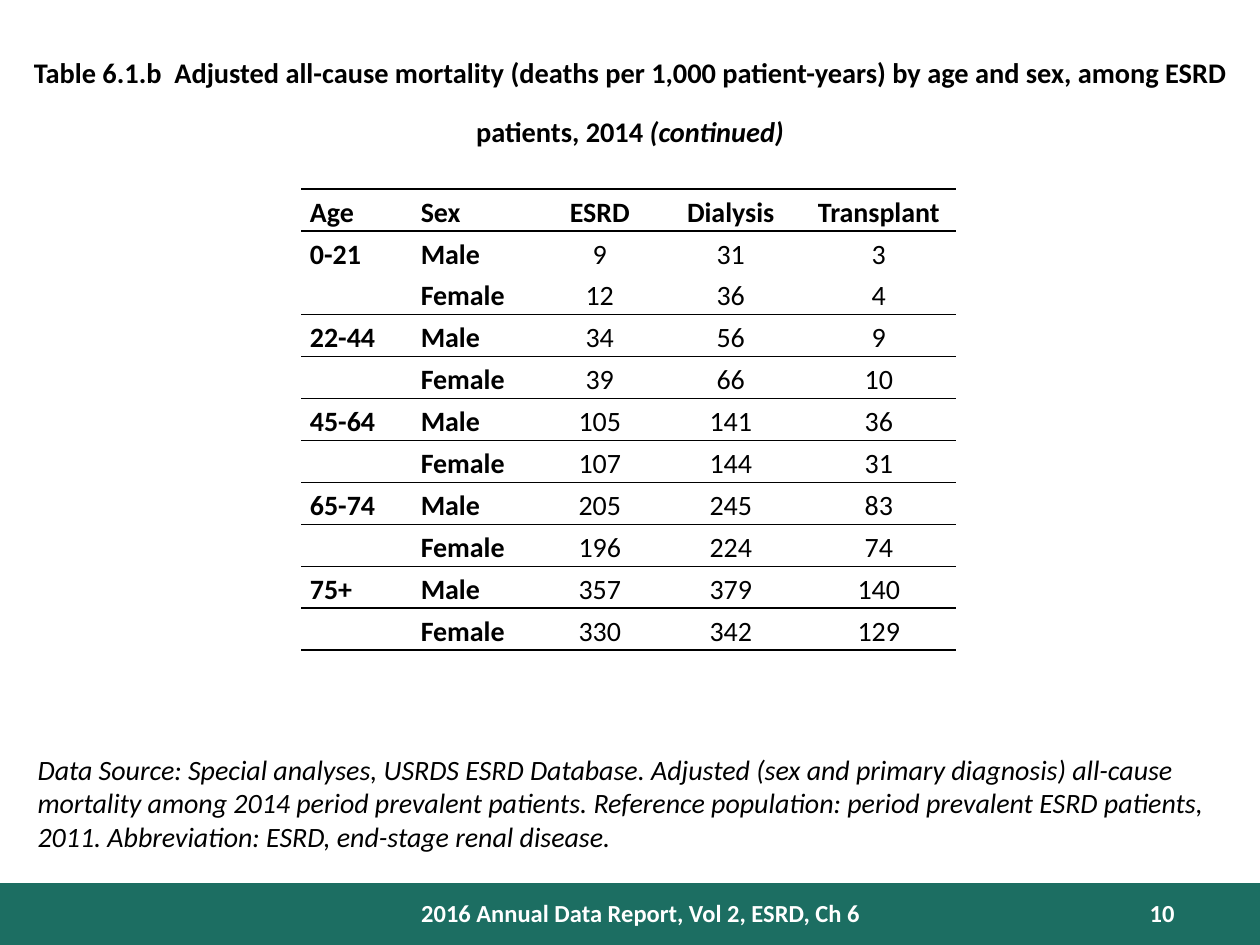
from dataclasses import dataclass
from lxml.etree import SubElement
from pptx import Presentation
from pptx.dml.color import RGBColor
from pptx.enum.shapes import MSO_SHAPE
from pptx.enum.text import MSO_ANCHOR as Anchor, MSO_AUTO_SIZE as AutoSize, PP_ALIGN as Align
from pptx.oxml.ns import qn
from pptx.util import Inches, Pt

# Content
TITLE = [
    ("Table 6.1.b  Adjusted all-cause mortality (deaths per 1,000 patient-years) "
     "by age and sex, among ESRD patients, 2014 ", False),
    ("(continued)", True),
]
HEADER = ("Age", "Sex", "ESRD", "Dialysis", "Transplant")
MORTALITY = {
    "0-21": [("Male", 9, 31, 3), ("Female", 12, 36, 4)],
    "22-44": [("Male", 34, 56, 9), ("Female", 39, 66, 10)],
    "45-64": [("Male", 105, 141, 36), ("Female", 107, 144, 31)],
    "65-74": [("Male", 205, 245, 83), ("Female", 196, 224, 74)],
    "75+": [("Male", 357, 379, 140), ("Female", 330, 342, 129)],
}
SOURCE = ("Data Source: Special analyses, USRDS ESRD Database. Adjusted (sex and primary "
          "diagnosis) all-cause mortality among 2014 period prevalent patients. Reference "
          "population: period prevalent ESRD patients, 2011. Abbreviation: ESRD, "
          "end-stage renal disease.")
FOOTER = "2016 Annual Data Report, Vol 2, ESRD, Ch 6"
PAGE_NUMBER = "10"


@dataclass(frozen=True)
class Theme:
    font: str = "Calibri"
    ink: str = "000000"
    paper: str = "FFFFFF"
    band: str = "1C6E62"
    title: int = 28
    body: int = 16
    footer: int = 14


THEME = Theme()
COLUMN_WIDTHS = (0.88, 1.01, 0.96, 1.12, 1.23)
ROW_HEIGHT = 3.66 / 11
LABEL_COLUMNS = 2
NO_GRID_STYLE = "{2D5ABB26-0587-4C30-8999-92F81FD0307C}"


def write(para, text, size=THEME.body, color=THEME.ink, bold=False, italic=False,
          align=Align.LEFT, spacing=None, raised=None):
    """Append one formatted run to a paragraph."""
    para.alignment = align
    if spacing:
        para.line_spacing = spacing
    span = para.add_run()
    span.text = text
    font = span.font
    font.name, font.size, font.bold, font.italic = THEME.font, Pt(size), bold, italic
    font.color.rgb = RGBColor.from_string(color)
    if raised:
        span._r.get_or_add_rPr().set("baseline", str(raised * 1000))


def add_text(page, text, left, top, width, height, anchor=Anchor.TOP, **style):
    box = page.shapes.add_textbox(Inches(left), Inches(top), Inches(width), Inches(height))
    frame = box.text_frame
    frame.word_wrap = True
    frame.vertical_anchor = anchor
    write(frame.paragraphs[0], text, **style)


def add_rule(cell, side):
    """Draw a 1 pt rule on one side (lnT or lnB) of a cell."""
    line = SubElement(cell._tc.get_or_add_tcPr(), qn(f"a:{side}"), w=str(Pt(1)))
    fill = SubElement(line, qn("a:solidFill"))
    SubElement(fill, qn("a:srgbClr"), val=THEME.ink)


def add_title(page):
    title = page.shapes.title
    title.left, title.top, title.width, title.height = map(Inches, (0, 0.34, 10, 0.73))
    frame = title.text_frame
    frame.word_wrap = True
    frame.vertical_anchor = Anchor.TOP
    frame.auto_size = AutoSize.SHAPE_TO_FIT_TEXT
    for text, italic in TITLE:
        write(frame.paragraphs[0], text, size=THEME.title, bold=True, italic=italic,
              align=Align.CENTER, raised=30)


def add_mortality_table(page):
    rows = [HEADER]
    for age, sexes in MORTALITY.items():
        rows += [(age if i == 0 else "", *values) for i, values in enumerate(sexes)]
    frame = page.shapes.add_table(
        len(rows), len(HEADER), Inches(2.39), Inches(1.5),
        Inches(sum(COLUMN_WIDTHS)), Inches(ROW_HEIGHT * len(rows)))
    table = frame.table
    table.first_row = table.horz_banding = False
    table._tbl.tblPr.find(qn("a:tableStyleId")).text = NO_GRID_STYLE
    for column, width in zip(table.columns, COLUMN_WIDTHS):
        column.width = Inches(width)

    for r, values in enumerate(rows):
        table.rows[r].height = Inches(ROW_HEIGHT)
        for c, value in enumerate(values):
            cell = table.cell(r, c)
            cell.margin_left = cell.margin_right = Inches(0.07)
            cell.margin_top = cell.margin_bottom = 0
            cell.vertical_anchor = Anchor.MIDDLE
            if r == 0:
                add_rule(cell, "lnT")
            if r != 1:  # the first age group has no inner rule
                add_rule(cell, "lnB")
            cell.fill.background()
            is_label = c < LABEL_COLUMNS
            write(cell.text_frame.paragraphs[0], str(value), bold=r == 0 or is_label,
                  align=Align.LEFT if is_label else Align.CENTER, spacing=1.15)


def add_footer(page):
    band = page.shapes.add_shape(MSO_SHAPE.RECTANGLE, 0, Inches(7.01), Inches(10), Inches(0.49))
    band.shadow.inherit = False
    band.fill.solid()
    band.fill.fore_color.rgb = RGBColor.from_string(THEME.band)
    band.line.fill.background()
    style = dict(size=THEME.footer, color=THEME.paper, bold=True, anchor=Anchor.MIDDLE)
    add_text(page, FOOTER, 3.17, 7.08, 3.83, 0.33, align=Align.CENTER, **style)
    add_text(page, PAGE_NUMBER, 8.42, 7.08, 1, 0.33, align=Align.RIGHT, **style)


def main():
    deck = Presentation()
    deck.slide_width, deck.slide_height = Inches(10), Inches(7.5)
    page = deck.slides.add_slide(deck.slide_layouts[5])
    add_footer(page)
    add_title(page)
    add_text(page, SOURCE, 0.2, 5.92, 9.51, 0.91, italic=True)
    add_mortality_table(page)
    deck.save("out.pptx")


if __name__ == "__main__":
    main()
